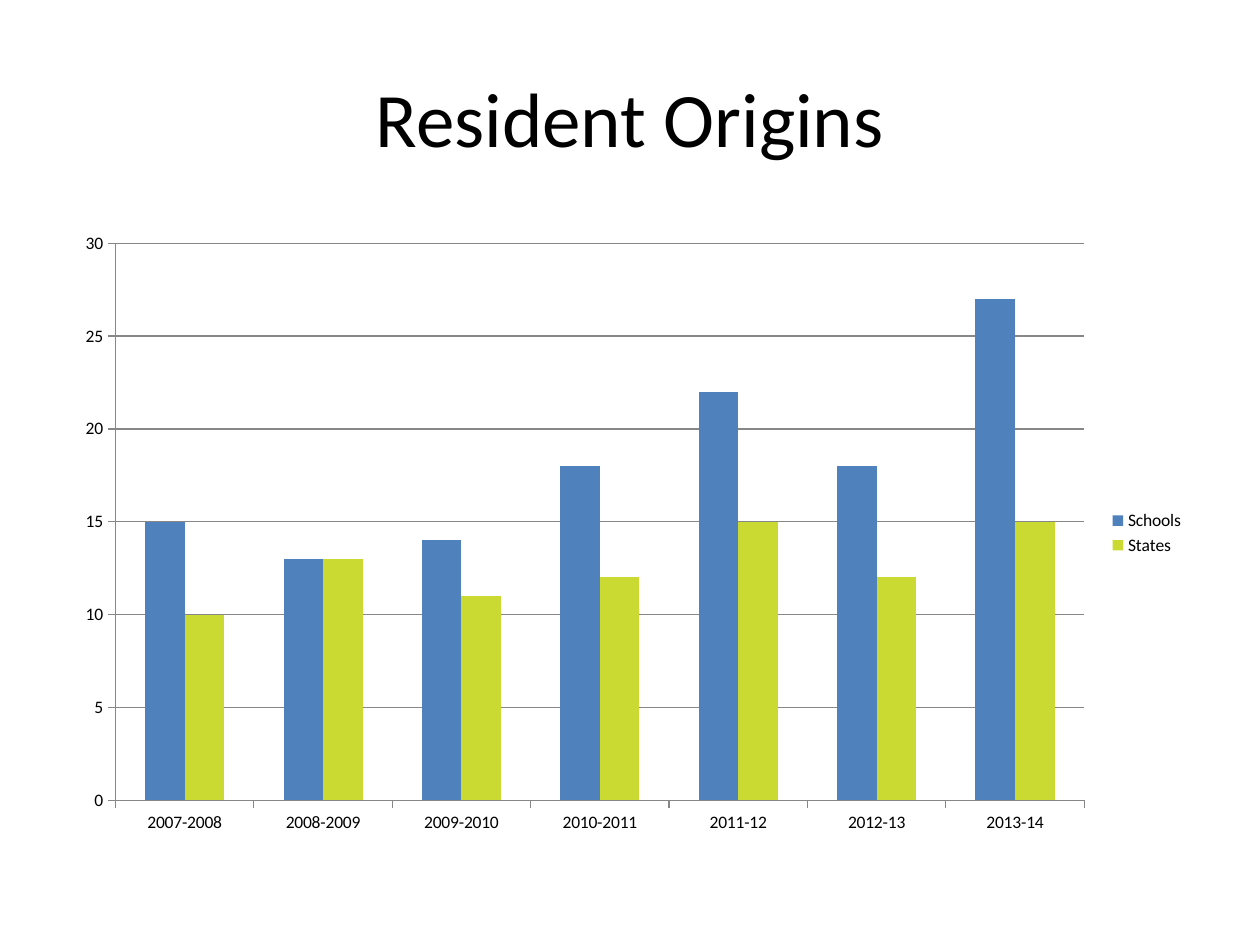
from pptx import Presentation, util as u
from pptx.chart import data as cd
from pptx.dml import color as dc
from pptx.enum import chart as ec, text as et

PX = u.Inches(1) / 126
FONT = "Calibri"
HEX = {"ink": "000000", "grid": "878787", "Schools": "4F81BD", "States": "CADA32"}
YEARS = ["2007-2008", "2008-2009", "2009-2010", "2010-2011",
         "2011-12", "2012-13", "2013-14"]
COUNTS = {
    "Schools": [15, 13, 14, 18, 22, 18, 27],
    "States": [10, 13, 11, 12, 15, 12, 15],
}


def px(*nums):
    return [u.Emu(round(n * PX)) for n in nums]


def rgb(name):
    return dc.RGBColor.from_string(HEX[name])


def style(font, size):
    font.name = FONT
    font.size = u.Pt(size)
    font.color.rgb = rgb("ink")


def add_title(slide, words, box):
    frame = slide.shapes.add_textbox(*px(*box)).text_frame
    frame.word_wrap = True
    frame.vertical_anchor = et.MSO_ANCHOR.MIDDLE
    frame.text = words
    para = frame.paragraphs[0]
    para.alignment = et.PP_ALIGN.CENTER
    style(para.runs[0].font, 44)


def rule(line):
    line.color.rgb = rgb("grid")
    line.width = u.Pt(0.75)


def add_bars(slide, box):
    data = cd.CategoryChartData()
    data.categories = YEARS
    for name, vals in COUNTS.items():
        data.add_series(name, vals)
    kind = ec.XL_CHART_TYPE.COLUMN_CLUSTERED
    chart = slide.shapes.add_chart(kind, *px(*box), data).chart
    style(chart.font, 10)
    chart.has_title = False
    chart.has_legend = True
    chart.legend.position = ec.XL_LEGEND_POSITION.RIGHT
    chart.legend.include_in_layout = False
    for axis in (chart.category_axis, chart.value_axis):
        axis.major_tick_mark = ec.XL_TICK_MARK.OUTSIDE
        axis.minor_tick_mark = ec.XL_TICK_MARK.NONE
        rule(axis.format.line)
    scale = chart.value_axis
    scale.minimum_scale, scale.maximum_scale, scale.major_unit = 0, 30, 5
    scale.has_major_gridlines = True
    rule(scale.major_gridlines.format.line)
    plot = chart.plots[0]
    plot.gap_width = 150
    plot.overlap = 0
    plot.vary_by_categories = False
    for bars in plot.series:
        bars.invert_if_negative = False
        bars.format.fill.solid()
        bars.format.fill.fore_color.rgb = rgb(bars.name)


def main():
    deck = Presentation()
    deck.slide_width, deck.slide_height = px(1260, 945)
    slide = deck.slides.add_slide(deck.slide_layouts[6])
    add_title(slide, "Resident Origins", (63, 38, 1134, 158))
    add_bars(slide, (63, 221, 1134, 624))
    deck.save("out.pptx")


if __name__ == "__main__":
    main()
